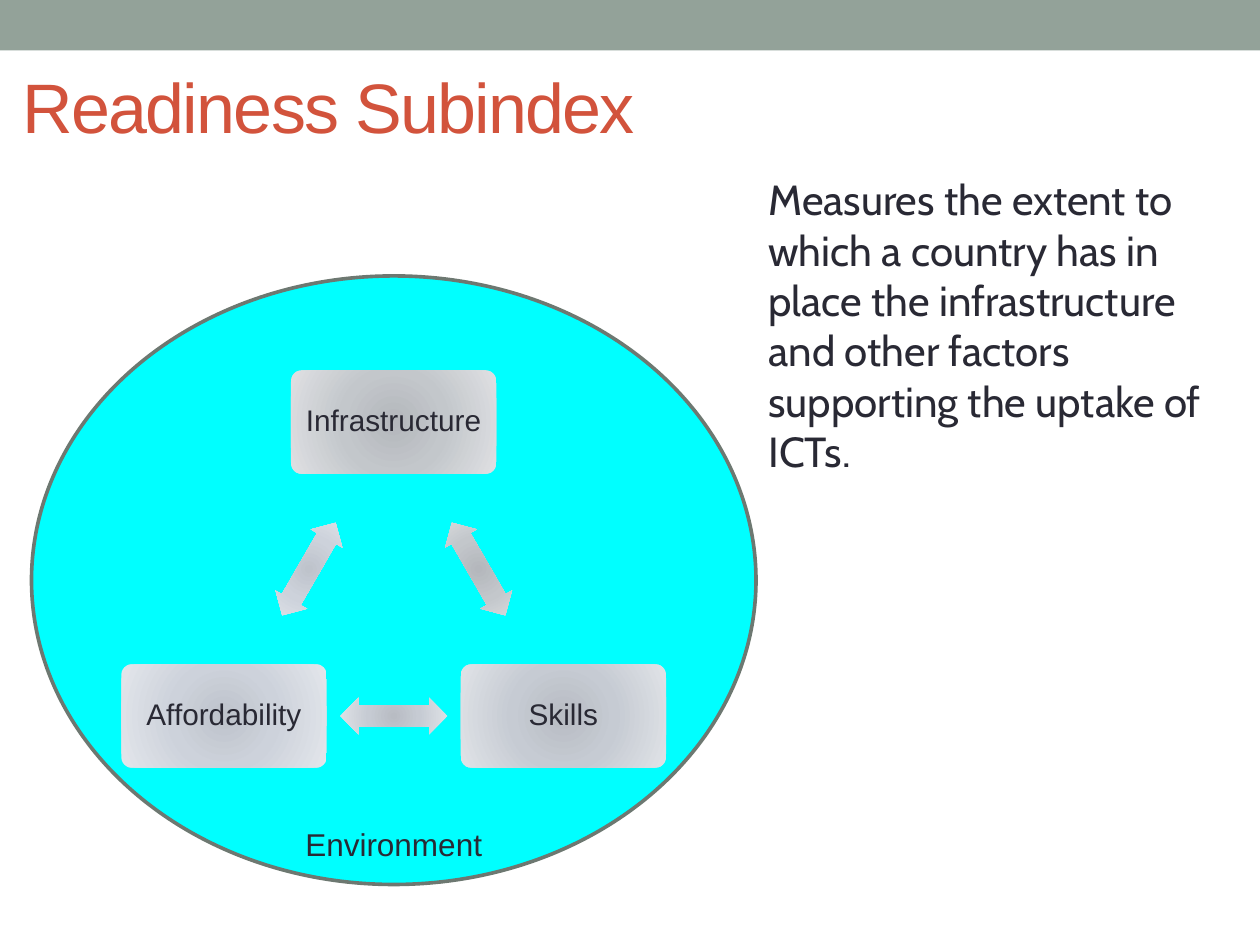
from dataclasses import dataclass
from math import cos, radians, sin

from lxml import etree
from pptx import Presentation
from pptx.dml.color import RGBColor
from pptx.enum.shapes import MSO_SHAPE
from pptx.enum.text import MSO_ANCHOR, PP_ALIGN
from pptx.oxml.ns import qn
from pptx.util import Inches, Pt

RECTANGLE = MSO_SHAPE.RECTANGLE
ELLIPSE = MSO_SHAPE.OVAL
CARD = MSO_SHAPE.ROUNDED_RECTANGLE
ARROW = MSO_SHAPE.LEFT_RIGHT_ARROW
MIDDLE = MSO_ANCHOR.MIDDLE
LEFT, CENTER = PP_ALIGN.LEFT, PP_ALIGN.CENTER

COLUMNS, ROWS = 100, 75
CELL = Inches(10) // COLUMNS
INK = "292934"
CYCLE_X, CYCLE_Y, CYCLE_RADIUS = 31.25, 49.05, 15.55
CARD_SIZE = (16.3, 8.2)
ARROW_SIZE = (8.5, 2.9)


@dataclass
class Area:
    left: float
    top: float
    width: float
    height: float

    def lengths(self) -> list[int]:
        return [round(n * CELL) for n in (self.left, self.top, self.width, self.height)]


@dataclass
class Factor:
    name: str
    shades: tuple[str, str, str]
    arrow_turn: int


FACTORS = [
    Factor("Infrastructure", ("B4B7BC", "C3C7CB", "DFE0E3"), 60),
    Factor("Skills", ("B8BCC3", "C6CBD3", "E0E3E7"), 180),
    Factor("Affordability", ("BEC3CB", "CDD2DB", "E3E6EB"), 300),
]


def color(value: str) -> RGBColor:
    return RGBColor.from_string(value)


def write(para, text: str, size: float, font: str, ink: str = INK, align=LEFT):
    para.alignment = align
    span = para.add_run()
    span.text = text
    span.font.size = Pt(size)
    span.font.name = font
    span.font.color.rgb = color(ink)
    return span


def add_plain(shapes, kind, area: Area, fill: str):
    shape = shapes.add_shape(kind, *area.lengths())
    shape.shadow.inherit = False
    shape.fill.solid()
    shape.fill.fore_color.rgb = color(fill)
    shape.line.fill.background()
    return shape


def add_glowing(shapes, kind, center: tuple, size: tuple, shades: tuple):
    width, height = size
    area = Area(center[0] - width / 2, center[1] - height / 2, width, height)
    shape = add_plain(shapes, kind, area, shades[0])
    gradient = etree.Element(qn("a:gradFill"), rotWithShape="1")
    stops = etree.SubElement(gradient, qn("a:gsLst"))
    for percent, shade in zip((0, 45, 100), shades):
        stop = etree.SubElement(stops, qn("a:gs"), pos=str(percent * 1000))
        etree.SubElement(stop, qn("a:srgbClr"), val=shade)
    circle = etree.SubElement(gradient, qn("a:path"), path="circle")
    etree.SubElement(circle, qn("a:fillToRect"), {side: "100000" for side in "ltrb"})
    properties = shape.element.spPr
    properties.replace(properties.find(qn("a:solidFill")), gradient)
    return shape


def cycle_point(angle: float, radius: float) -> tuple[float, float]:
    return (CYCLE_X + radius * sin(radians(angle)),
            CYCLE_Y - radius * cos(radians(angle)))


def add_cycle(page) -> None:
    group = page.shapes.add_group_shape()
    step = 360 / len(FACTORS)
    for index, factor in enumerate(FACTORS):
        angle = index * step
        card = add_glowing(group.shapes, CARD, cycle_point(angle, CYCLE_RADIUS),
                           CARD_SIZE, factor.shades)
        card.adjustments[0] = 0.1
        frame = card.text_frame
        frame.word_wrap = True
        frame.vertical_anchor = MIDDLE
        frame.margin_left = frame.margin_right = Inches(0.07)
        frame.margin_top = frame.margin_bottom = Inches(0.07)
        para = frame.paragraphs[0]
        para.line_spacing = 0.9
        write(para, factor.name, 17, "Arial", align=CENTER)

        midpoint = cycle_point(angle + step / 2, CYCLE_RADIUS * cos(radians(step / 2)))
        arrow = add_glowing(group.shapes, ARROW, midpoint, ARROW_SIZE, factor.shades)
        arrow.adjustments[0] = 0.6
        arrow.adjustments[1] = 0.5
        arrow.rotation = factor.arrow_turn


def add_text(page, area: Area, text: str, size: float, font: str, align=LEFT) -> None:
    box = page.shapes.add_textbox(*area.lengths())
    box.text_frame.word_wrap = True
    write(box.text_frame.paragraphs[0], text, size, font, align=align)


def add_title(page, area: Area, text: str) -> None:
    title = page.shapes.title
    title.left, title.top, title.width, title.height = area.lengths()
    title.text_frame.vertical_anchor = MIDDLE
    span = write(title.text_frame.paragraphs[0], text, 40, "Arial", "D2533C")
    span.font._element.set("spc", "-100")


def main() -> None:
    deck = Presentation()
    deck.slide_width, deck.slide_height = COLUMNS * CELL, ROWS * CELL
    page = deck.slides.add_slide(deck.slide_layouts[5])
    add_plain(page.shapes, RECTANGLE, Area(0, 0, COLUMNS, 4), "93A299")
    environment = add_plain(page.shapes, ELLIPSE, Area(2.5, 21.9, 57.5, 48.3), "00FFFF")
    environment.line.color.rgb = color("6D7871")
    environment.line.width = Pt(2.08)
    add_title(page, Area(0.8, 2.5, 90, 11.7), "Readiness Subindex")
    add_cycle(page)
    add_text(page, Area(19.6, 65, 23.3, 4), "Environment", 18, "Arial", CENTER)
    add_text(page, Area(60, 13.3, 37.5, 31.3),
             "Measures the extent to which a country has in place the infrastructure "
             "and other factors supporting the uptake of ICTs.", 24, "Cabin")
    deck.save("out.pptx")


if __name__ == "__main__":
    main()
